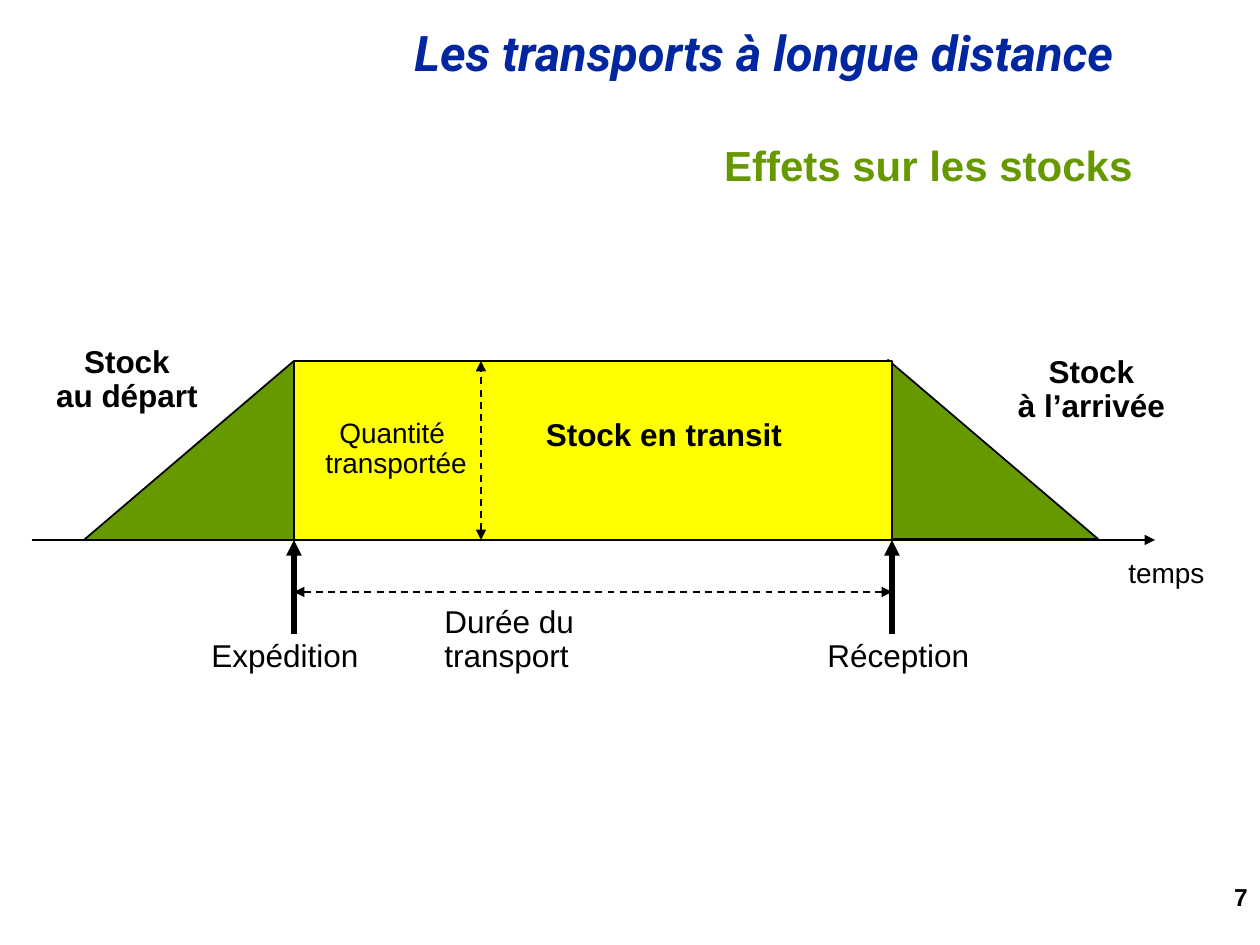
from pptx import Presentation
from pptx.dml.color import RGBColor
from pptx.enum.dml import MSO_LINE
from pptx.enum.shapes import MSO_CONNECTOR, MSO_SHAPE
from pptx.enum.text import MSO_ANCHOR, PP_ALIGN
from pptx.oxml.ns import qn
from pptx.util import Emu, Pt
from lxml.etree import SubElement

PX = 914400 / 126
BLACK, BLUE, GREEN, YELLOW = "000000", "00279F", "669900", "FFFF00"
LEFT, CENTER, RIGHT = PP_ALIGN.LEFT, PP_ALIGN.CENTER, PP_ALIGN.RIGHT


def px(*values):
    return [Emu(round(value * PX)) for value in values]


def color(hex_string):
    return RGBColor.from_string(hex_string)


class StockDiagram:
    """Draws the elements of the stock diagram on one slide in a shared style."""

    def __init__(self, slide, font="Arial", ink=BLACK):
        self.slide, self.font, self.ink = slide, font, ink

    def text(self, words, box, size=18, bold=False, italic=False, align=LEFT,
             ink=None, font=None, wrap=False, anchor=MSO_ANCHOR.TOP):
        frame = self.slide.shapes.add_textbox(*px(*box)).text_frame
        frame.word_wrap = wrap
        frame.vertical_anchor = anchor
        paragraph = frame.paragraphs[0]
        paragraph.text = words
        paragraph.alignment = align
        paragraph.line_spacing = 0.9
        for run in paragraph.runs:
            run.font.name = font or self.font
            run.font.size = Pt(size)
            run.font.bold = bold
            run.font.italic = italic
            run.font.color.rgb = color(ink or self.ink)

    def area(self, kind, box, fill, mirrored=False):
        shape = self.slide.shapes.add_shape(kind, *px(*box))
        shape.shadow.inherit = False
        shape.fill.solid()
        shape.fill.fore_color.rgb = color(fill)
        shape.line.color.rgb = color(self.ink)
        shape.line.width = Pt(1)
        if mirrored:
            shape.element.spPr.find(qn("a:xfrm")).set("flipH", "1")

    def arrow(self, start, end, width=1, double=False):
        connector = self.slide.shapes.add_connector(
            MSO_CONNECTOR.STRAIGHT, *px(*start, *end))
        line = connector.line
        line.color.rgb = color(self.ink)
        line.width = Pt(width)
        if double:
            line.dash_style = MSO_LINE.DASH
        properties = connector.element.spPr
        outline = properties.find(qn("a:ln"))
        for tip in ("a:headEnd", "a:tailEnd") if double else ("a:tailEnd",):
            SubElement(outline, qn(tip), type="triangle")
        SubElement(properties, qn("a:effectLst"))


def main():
    presentation = Presentation()
    presentation.slide_width, presentation.slide_height = px(1260, 945)
    slide = presentation.slides.add_slide(presentation.slide_layouts[6])
    diagram = StockDiagram(slide)

    shipping, receipt, top, axis = 294, 892, 361, 540
    height, ramp = axis - top, 210

    diagram.text("Les transports à longue distance", (402, 23, 858, 66), 28,
                 bold=True, italic=True, ink=BLUE, font="Roboto", wrap=True)
    diagram.text("Effets sur les stocks", (147, 136, 998, 63), 24, bold=True,
                 align=RIGHT, ink=GREEN, wrap=True, anchor=MSO_ANCHOR.MIDDLE)

    diagram.arrow((32, axis), (1155, axis))
    diagram.area(MSO_SHAPE.RIGHT_TRIANGLE, (888, 360, ramp, height), GREEN)
    diagram.area(MSO_SHAPE.RIGHT_TRIANGLE, (shipping - ramp, top, ramp, height),
                 GREEN, mirrored=True)
    diagram.area(MSO_SHAPE.RECTANGLE,
                 (shipping, top, receipt - shipping, height), YELLOW)

    diagram.arrow((shipping, 592), (receipt, 592), double=True)
    diagram.arrow((481, axis), (481, top), double=True)
    for moment in (shipping, receipt):
        diagram.arrow((moment, 634), (moment, axis), width=3)

    diagram.text("Durée du transport", (432, 600, 287, 47))
    diagram.text("Quantité \vtransportée", (312, 413, 168, 73), 16, align=CENTER)
    diagram.text("temps", (1116, 553, 102, 43), 16)
    diagram.text("Expédition", (199, 634, 173, 47))
    diagram.text("Réception", (815, 634, 168, 47))
    diagram.text("Stock en transit", (533, 413, 262, 47), bold=True, align=CENTER)
    diagram.text("Stock\vau départ", (25, 340, 204, 81), bold=True,
                 align=CENTER, wrap=True)
    diagram.text("Stock\và l’arrivée", (997, 350, 189, 81), bold=True,
                 align=CENTER, wrap=True)
    diagram.text("7", (976, 879, 284, 50), 14, bold=True, align=RIGHT, wrap=True)

    presentation.save("out.pptx")


if __name__ == "__main__":
    main()
